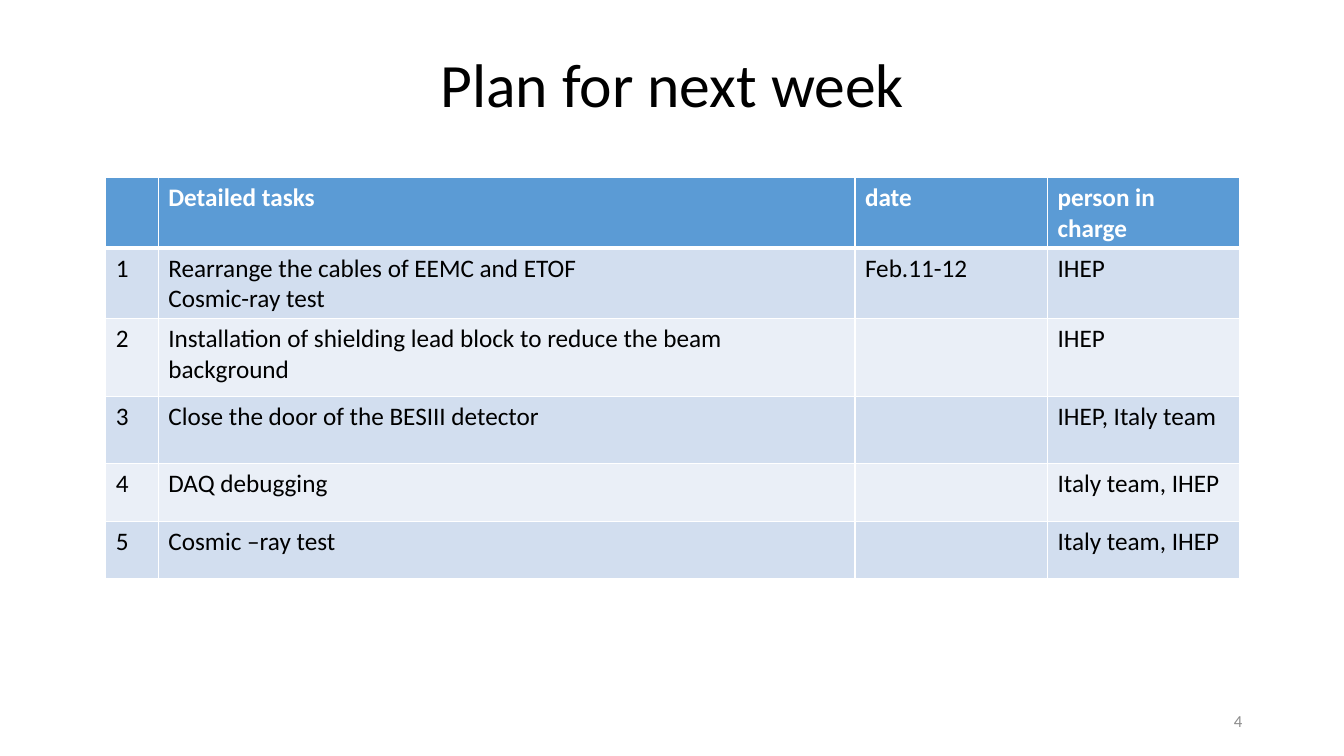
from lxml import etree
from pptx import Presentation, util as u
from pptx.dml.color import RGBColor
from pptx.enum import text as t
from pptx.oxml.ns import qn

PX = 9144
WHITE = RGBColor(0xFF, 0xFF, 0xFF)
BLACK = RGBColor(0, 0, 0)
GRAY = RGBColor(0x8C, 0x8C, 0x8C)
BLUE = RGBColor(0x5B, 0x9B, 0xD5)
BANDS = RGBColor(0xEA, 0xEF, 0xF7), RGBColor(0xD2, 0xDE, 0xEF)

COLS = [52, 691, 191, 191]
HEIGHTS = [54, 57, 77, 67, 57, 57]
TASKS = [
    ["", "Detailed tasks", "date", "person in charge"],
    ["1", "Rearrange the cables of EEMC and ETOF\nCosmic-ray test", "Feb.11-12", "IHEP"],
    ["2", "Installation of shielding lead block to reduce the beam background", "", "IHEP"],
    ["3", "Close the door of the BESIII detector", "", "IHEP, Italy team"],
    ["4", "DAQ debugging", "", "Italy team, IHEP"],
    ["5", "Cosmic –ray test", "", "Italy team, IHEP"],
]


def write(frame, words, size=18, color=BLACK, bold=False, align=None, space=None):
    frame.text = words
    for para in frame.paragraphs:
        para.alignment = align
        para.line_spacing = space
        font = para.font
        font.name, font.size, font.bold = "Calibri", u.Pt(size), bold
        font.color.rgb = color
        for run in para.runs:
            run.font.name, run.font.size, run.font.bold = "Calibri", u.Pt(size), bold
            run.font.color.rgb = color


class Deck:
    """Holds the style and the current slide."""

    def __init__(self, wide, high):
        self.file = Presentation()
        self.file.slide_width, self.file.slide_height = wide * PX, high * PX
        self.slide = self.file.slides.add_slide(self.file.slide_layouts[5])

    def title(self, words, left, top, wide, high):
        box = self.slide.shapes.title
        box.left, box.top, box.width, box.height = (n * PX for n in (left, top, wide, high))
        box.text_frame.vertical_anchor = t.MSO_ANCHOR.MIDDLE
        write(box.text_frame, words, size=44, align=t.PP_ALIGN.CENTER, space=0.9)

    def label(self, words, left, top, wide, high, **style):
        box = self.slide.shapes.add_textbox(*(n * PX for n in (left, top, wide, high)))
        box.text_frame.word_wrap = True
        box.text_frame.vertical_anchor = t.MSO_ANCHOR.MIDDLE
        write(box.text_frame, words, **style)

    def border(self, cell, **widths):
        props = cell._tc.get_or_add_tcPr()
        for side in "LRTB":
            line = etree.SubElement(props, qn("a:ln" + side), w=str(u.Pt(widths.get(side, 1))))
            fill = etree.SubElement(line, qn("a:solidFill"))
            etree.SubElement(fill, qn("a:srgbClr"), val=str(WHITE))

    def table(self, rows, left, top, cols, heights):
        size = left, top, sum(cols), sum(heights)
        grid = self.slide.shapes.add_table(len(rows), len(cols), *(n * PX for n in size)).table
        for col, wide in zip(grid.columns, cols):
            col.width = wide * PX
        for i, (row, high) in enumerate(zip(rows, heights)):
            grid.rows[i].height = high * PX
            head = i == 0
            for j, words in enumerate(row):
                cell = grid.cell(i, j)
                self.border(cell, T=3 if i == 1 else 1, B=3 if head else 1)
                cell.fill.solid()
                cell.fill.fore_color.rgb = BLUE if head else BANDS[i % 2]
                write(cell.text_frame, words, color=WHITE if head else BLACK, bold=head)


def main():
    deck = Deck(1333, 750)
    deck.title("Plan for next week", 92, 40, 1150, 93)
    deck.label("4", 942, 695, 300, 40, size=12, color=GRAY, align=t.PP_ALIGN.RIGHT)
    deck.table(TASKS, 105, 176, COLS, HEIGHTS)
    deck.file.save("out.pptx")


if __name__ == "__main__":
    main()
